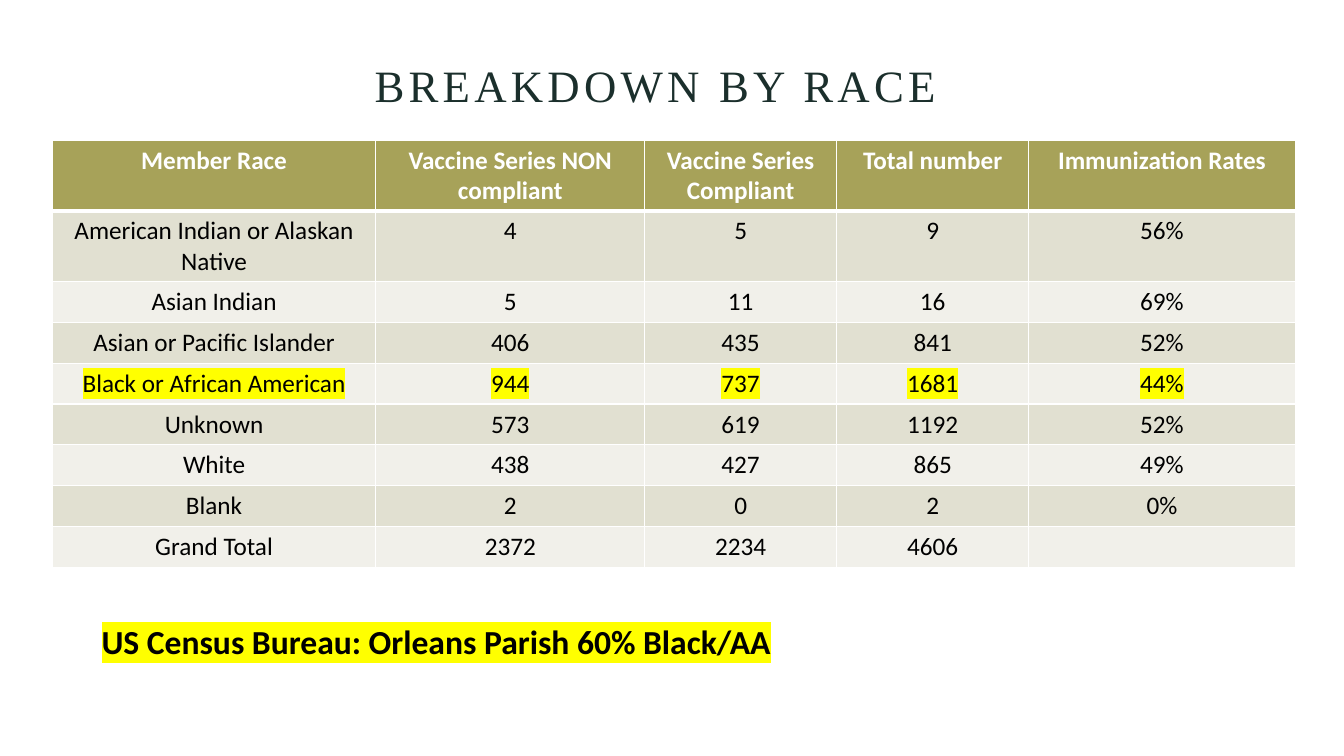
from lxml import etree
from pptx import Presentation
from pptx import util as u
from pptx.dml.color import RGBColor
from pptx.enum import text
from pptx.oxml import ns

WHITE, BLACK, YELLOW = "FFFFFF", "000000", "FFFF00"
HEADS = ["Member Race", "Vaccine Series NON compliant", "Vaccine Series Compliant",
         "Total number", "Immunization Rates"]
ROWS = [
    ["American Indian or Alaskan Native", "4", "5", "9", "56%"],
    ["Asian Indian", "5", "11", "16", "69%"],
    ["Asian or Pacific Islander", "406", "435", "841", "52%"],
    ["Black or African American", "944", "737", "1681", "44%"],
    ["Unknown", "573", "619", "1192", "52%"],
    ["White", "438", "427", "865", "49%"],
    ["Blank", "2", "0", "2", "0%"],
    ["Grand Total", "2372", "2234", "4606", ""],
]
MARKED = "Black or African American"
WIDTHS = [8.15, 6.78, 4.83, 4.85, 6.71]
HEIGHTS = [1.78] * 2 + [1.03] * 7


def paint(color):
    return RGBColor.from_string(color)


def add_fill(parent, color):
    fill = etree.SubElement(parent, ns.qn("a:solidFill"))
    etree.SubElement(fill, ns.qn("a:srgbClr"), val=color)


class Deck:
    """Hold the text style and the current slide, and add elements to it."""

    def __init__(self):
        self.font = "Calibri"
        self.show = Presentation()
        self.show.slide_width = u.Cm(33.87)
        self.show.slide_height = u.Cm(19.05)
        self.slide = self.show.slides.add_slide(self.show.slide_layouts[5])

    def run(self, para, words, size, color, bold=False, mark=None, font=None):
        run = para.add_run()
        run.text = words
        run.font.size = u.Pt(size)
        run.font.bold = bold
        run.font.name = font or self.font
        run.font.color.rgb = paint(color)
        if mark:
            glow = etree.Element(ns.qn("a:highlight"))
            etree.SubElement(glow, ns.qn("a:srgbClr"), val=mark)
            run.font._element.find(ns.qn("a:solidFill")).addnext(glow)
        return run

    def title(self, words, box):
        shape = self.slide.shapes.title
        shape.left, shape.top, shape.width, shape.height = map(u.Cm, box)
        frame = shape.text_frame
        frame.auto_size = text.MSO_AUTO_SIZE.NONE
        frame.vertical_anchor = text.MSO_ANCHOR.BOTTOM
        para = frame.paragraphs[0]
        para.alignment = text.PP_ALIGN.CENTER
        para.line_spacing = 0.9
        run = self.run(para, words, 32, "1B2F2C", font="Times New Roman")
        run.font._element.set("spc", "300")

    def note(self, words, box):
        frame = self.slide.shapes.add_textbox(*map(u.Cm, box)).text_frame
        frame.word_wrap = True
        frame.auto_size = text.MSO_AUTO_SIZE.SHAPE_TO_FIT_TEXT
        self.run(frame.paragraphs[0], words, 24, BLACK, True, YELLOW)

    def edge(self, cell, top, base):
        props = cell._tc.get_or_add_tcPr()
        for side, width in (("L", 1), ("R", 1), ("T", top), ("B", base)):
            line = etree.SubElement(props, ns.qn("a:ln" + side), w=str(u.Pt(width)))
            add_fill(line, WHITE)

    def table(self, rows, left, top):
        size = map(u.Cm, (left, top, sum(WIDTHS), sum(HEIGHTS)))
        table = self.slide.shapes.add_table(len(rows), len(WIDTHS), *size).table
        for col, width in zip(table.columns, WIDTHS):
            col.width = u.Cm(width)
        for i, (row, height) in enumerate(zip(rows, HEIGHTS)):
            table.rows[i].height = u.Cm(height)
            head = i == 0
            shade = "A7A259" if head else ("F1F0EA", "E1E0D1")[i % 2]
            mark = YELLOW if row[0] == MARKED else None
            for j, words in enumerate(row):
                cell = table.cell(i, j)
                self.edge(cell, 3 if i == 1 else 1, 3 if head else 1)
                cell.fill.solid()
                cell.fill.fore_color.rgb = paint(shade)
                para = cell.text_frame.paragraphs[0]
                para.alignment = text.PP_ALIGN.CENTER
                if words:
                    self.run(para, words, 18, WHITE if head else BLACK, head, mark)


def main():
    deck = Deck()
    deck.title("BREAKDOWN BY RACE", (3.33, 0.97, 26.37, 1.98))
    deck.note("US Census Bureau: Orleans Parish 60% Black/AA", (2.31, 15.52, 21.82, 1.27))
    deck.table([HEADS] + ROWS, 1.32, 3.53)
    deck.show.save("out.pptx")


if __name__ == "__main__":
    main()
